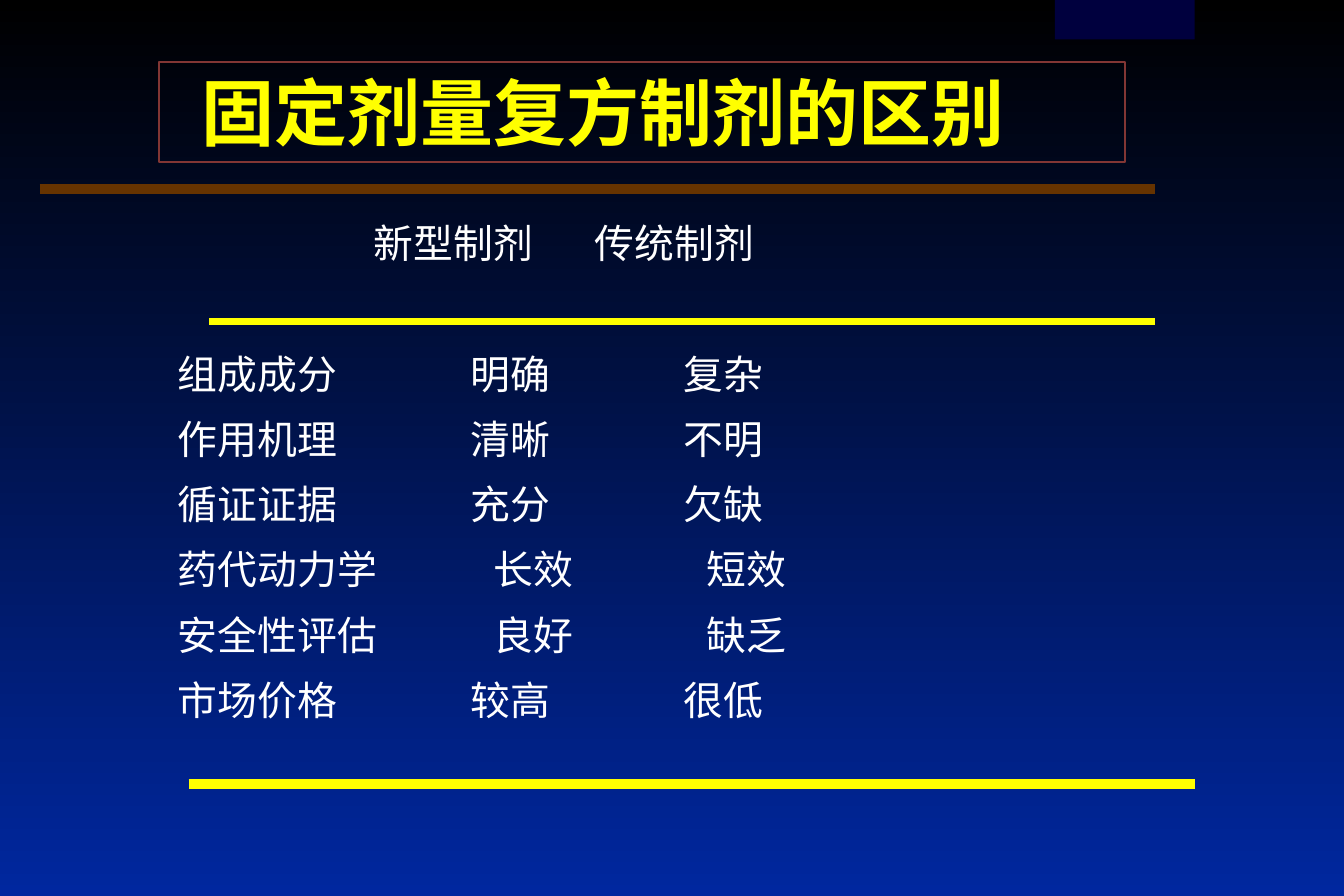
from dataclasses import dataclass

from lxml import etree
from pptx import Presentation
from pptx import util as u
from pptx.dml.color import RGBColor
from pptx.enum import shapes, text
from pptx.oxml.ns import qn

TITLE = "固定剂量复方制剂的区别"
HEADER = ("", "新型制剂", "传统制剂")
ROWS = [
    ("组成成分", "明确", "复杂"),
    ("作用机理", "清晰", "不明"),
    ("循证证据", "充分", "欠缺"),
    ("药代动力学", "长效", "短效"),
    ("安全性评估", "良好", "缺乏"),
    ("市场价格", "较高", "很低"),
]


@dataclass(frozen=True)
class Theme:
    font: str = "Noto Sans CJK SC"
    title_size: int = 44
    title_pitch: int = 56
    body_size: int = 24
    row_pitch: float = 39.3
    sky: str = "000000"
    ground: str = "00279F"
    yellow: str = "FFFF00"
    white: str = "FFFFFF"
    frame: str = "823634"
    brown: str = "663300"
    navy: str = "00003E"


THEME = Theme()

# Tab stops in cm, measured from the left edge of the row labels
HEADER_TABS = (4.17, 8.87)
SHORT_TABS = (6.23, 10.76)
LONG_LABEL_SHIFT = 0.48

# left, right, height on the slide in cm; colour; width in points
RULES = [
    (0.84, 24.56, 4.01, THEME.brown, 6),
    (4.45, 24.56, 6.83, THEME.yellow, 4.5),
    (4.01, 25.4, 16.66, THEME.yellow, 6),
]


def rgb(value):
    return RGBColor.from_string(value)


def box(left, top, width, height):
    return u.Cm(left), u.Cm(top), u.Cm(width), u.Cm(height)


def prepare_frame(shape, left, top):
    """Fix the text area, with insets in cm, and return its frame."""
    frame = shape.text_frame
    frame.word_wrap = True
    frame.auto_size = text.MSO_AUTO_SIZE.NONE
    frame.vertical_anchor = text.MSO_ANCHOR.TOP
    frame.margin_left, frame.margin_top = u.Cm(left), u.Cm(top)
    frame.margin_right = frame.margin_bottom = 0
    return frame


def format_paragraph(paragraph, pitch, before=0):
    paragraph.alignment = text.PP_ALIGN.LEFT
    paragraph.line_spacing = u.Pt(pitch)
    paragraph.space_before = u.Pt(before)


def add_run(paragraph, words, size, color, bold=False):
    run = paragraph.add_run()
    run.text = words
    run.font.size = u.Pt(size)
    run.font.bold = bold
    run.font.color.rgb = rgb(color)
    run.font.name = THEME.font
    east_asian = etree.SubElement(run.font._element, qn("a:ea"))
    east_asian.set("typeface", THEME.font)


def set_tabs(paragraph, stops):
    """Set left tab stops given in cm."""
    tabs = etree.SubElement(paragraph._p.get_or_add_pPr(), qn("a:tabLst"))
    for stop in stops:
        etree.SubElement(tabs, qn("a:tab"), pos=str(int(u.Cm(stop))), algn="l")


def row_tabs(label):
    shift = LONG_LABEL_SHIFT if len(label) > 4 else 0
    return [stop + shift for stop in SHORT_TABS]


def paint_background(slide):
    fill = slide.background.fill
    fill.gradient()
    fill.gradient_angle = 270
    for stop, position, color in zip(fill.gradient_stops, (0, 1), (THEME.sky, THEME.ground)):
        stop.position = position
        stop.color.rgb = rgb(color)


def fill_title(title):
    title.left, title.top, title.width, title.height = box(3.38, 1.32, 20.54, 2.13)
    title.line.color.rgb = rgb(THEME.frame)
    title.line.width = u.Pt(1.25)
    paragraph = prepare_frame(title, 0.9, 0).paragraphs[0]
    format_paragraph(paragraph, THEME.title_pitch)
    add_run(paragraph, TITLE, THEME.title_size, THEME.yellow, bold=True)


def add_comparison(slide):
    comparison = slide.shapes.add_textbox(*box(2.97, 4.24, 23.5, 14.81))
    frame = prepare_frame(comparison, 0.81, 0.05)
    for index, row in enumerate([HEADER] + ROWS):
        paragraph = frame.add_paragraph() if index else frame.paragraphs[0]
        before = THEME.row_pitch if index == 1 else 0
        format_paragraph(paragraph, THEME.row_pitch, before)
        set_tabs(paragraph, row_tabs(row[0]) if index else HEADER_TABS)
        add_run(paragraph, "\t".join(row), THEME.body_size, THEME.white)


def add_corner_block(slide):
    block = slide.shapes.add_shape(
        shapes.MSO_SHAPE.RECTANGLE, *box(22.43, 0, 2.97, 0.84))
    block.shadow.inherit = False
    block.fill.solid()
    block.fill.fore_color.rgb = rgb(THEME.navy)
    block.line.fill.background()


def add_rule(slide, left, right, height, color, width):
    rule = slide.shapes.add_connector(
        shapes.MSO_CONNECTOR.STRAIGHT, u.Cm(left), u.Cm(height), u.Cm(right), u.Cm(height))
    rule.line.color.rgb = rgb(color)
    rule.line.width = u.Pt(width)
    etree.SubElement(rule._element.spPr, qn("a:effectLst"))


def main():
    presentation = Presentation()
    presentation.slide_width, presentation.slide_height = u.Inches(11.25), u.Inches(7.5)
    slide = presentation.slides.add_slide(presentation.slide_layouts[5])
    paint_background(slide)
    fill_title(slide.shapes.title)
    add_comparison(slide)
    add_corner_block(slide)
    for rule in RULES:
        add_rule(slide, *rule)
    presentation.save("out.pptx")


if __name__ == "__main__":
    main()
